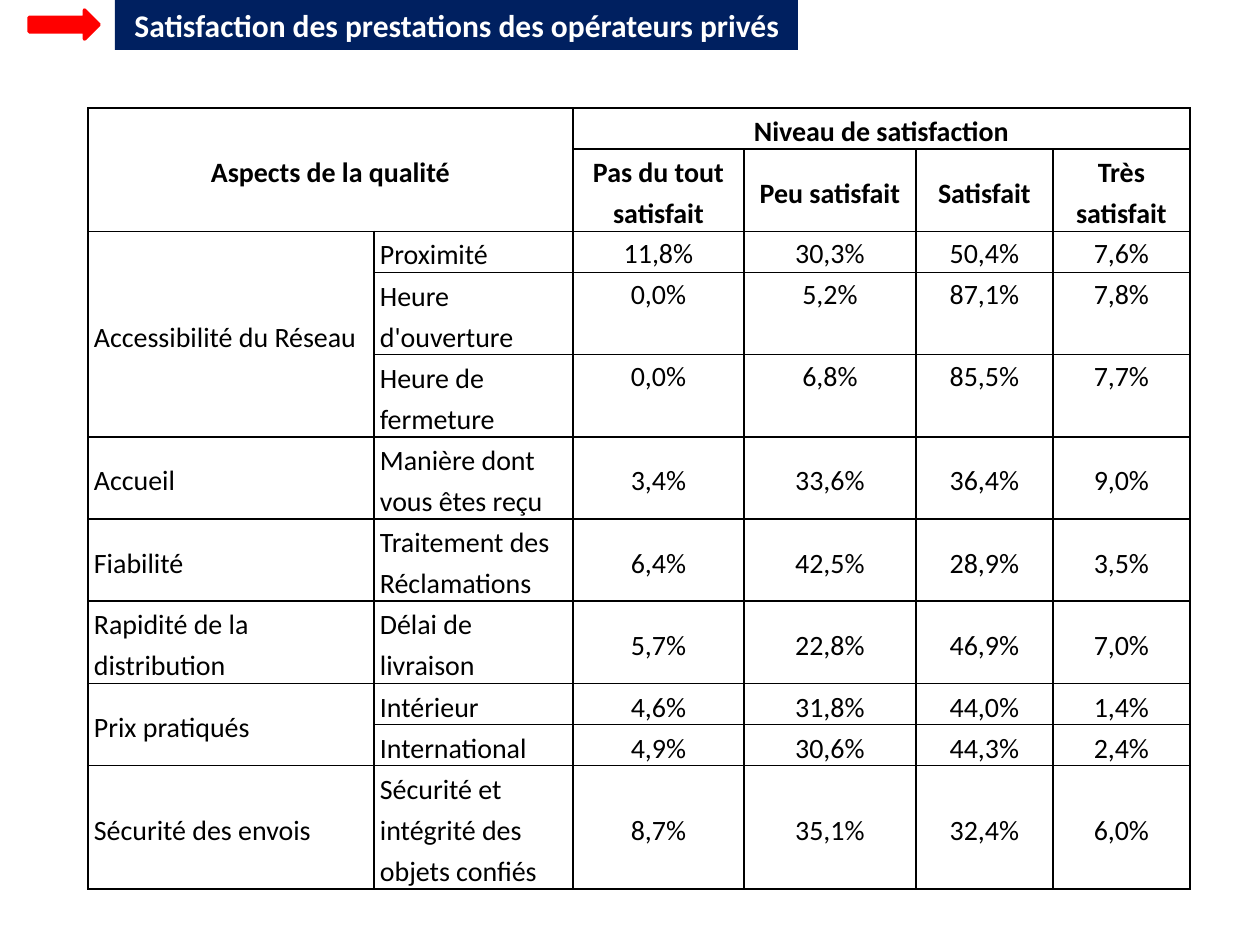
"""Builds the slide on satisfaction with the services of private operators."""
import pptx
import pptx.util
import pptx.dml.color
import pptx.enum.shapes
import pptx.enum.text
import pptx.oxml
import pptx.oxml.ns

TITLE = " Satisfaction des prestations des opérateurs privés"
ASPECTS_HEADING = "Aspects de la qualité"
LEVEL_HEADING = "Niveau de satisfaction"
LEVELS = ["Pas du tout satisfait", "Peu satisfait", "Satisfait", "Très satisfait"]
ASPECTS = [
    ("Accessibilité du Réseau", [
        ("Proximité", 1, ["11,8%", "30,3%", "50,4%", "7,6%"]),
        ("Heure d'ouverture", 2, ["0,0%", "5,2%", "87,1%", "7,8%"]),
        ("Heure de fermeture", 2, ["0,0%", "6,8%", "85,5%", "7,7%"]),
    ]),
    ("Accueil", [("Manière dont vous êtes reçu", 2, ["3,4%", "33,6%", "36,4%", "9,0%"])]),
    ("Fiabilité", [("Traitement des Réclamations", 2, ["6,4%", "42,5%", "28,9%", "3,5%"])]),
    ("Rapidité de la distribution", [("Délai de livraison", 2, ["5,7%", "22,8%", "46,9%", "7,0%"])]),
    ("Prix pratiqués", [
        ("Intérieur", 1, ["4,6%", "31,8%", "44,0%", "1,4%"]),
        ("International", 1, ["4,9%", "30,6%", "44,3%", "2,4%"]),
    ]),
    ("Sécurité des envois", [
        ("Sécurité et intégrité des objets confiés", 3, ["8,7%", "35,1%", "32,4%", "6,0%"]),
    ]),
]
COLUMN_WIDTHS = [286, 199, 171, 172, 137, 137]
LINE_HEIGHT = 40
HEADER_LINES = [1, 2]
THEME = {
    "font": "Calibri", "title_size": 18, "table_size": 16,
    "banner": "002060", "arrow": "FF0000", "ink": "000000", "paper": "FFFFFF",
}
Align = pptx.enum.text.PP_ALIGN
Anchor = pptx.enum.text.MSO_ANCHOR
Preset = pptx.enum.shapes.MSO_SHAPE


def px(length):
    return pptx.util.Emu(round(length * 914400 / 126))


def color(role):
    return pptx.dml.color.RGBColor.from_string(THEME[role])


def style_text(paragraph, size, role, bold):
    for run in paragraph.runs:
        run.font.name = THEME["font"]
        run.font.size = pptx.util.Pt(THEME[size])
        run.font.bold = bold
        run.font.color.rgb = color(role)


def add_block(slide, preset, box, role):
    block = slide.shapes.add_shape(preset, *map(px, box))
    block.shadow.inherit = False
    block.fill.solid()
    block.fill.fore_color.rgb = color(role)
    block.line.fill.background()
    return block


def add_title(slide):
    banner = add_block(slide, Preset.RECTANGLE, (115, 0, 683, 50), "banner")
    frame = banner.text_frame
    frame.text = TITLE
    frame.word_wrap = False
    frame.vertical_anchor = Anchor.MIDDLE
    frame.paragraphs[0].alignment = Align.LEFT
    style_text(frame.paragraphs[0], "title_size", "paper", True)
    arrow = add_block(slide, Preset.RIGHT_ARROW, (29, 10, 70, 29), "arrow")
    arrow.line.color.rgb = color("arrow")
    arrow.line.width = pptx.util.Pt(2)


def draw_borders(cell):
    properties = cell._tc.get_or_add_tcPr()
    for position, side in enumerate(("lnL", "lnR", "lnT", "lnB")):
        properties.insert(position, pptx.oxml.parse_xml(
            f'<a:{side} {pptx.oxml.ns.nsdecls("a")} w="12700"><a:solidFill>'
            f'<a:srgbClr val="{THEME["ink"]}"/></a:solidFill></a:{side}>'))


def write(cell, text, bold=False, align=Align.CENTER, anchor=Anchor.MIDDLE, spacing=1.2, after=None):
    cell.text_frame.text = text
    cell.vertical_anchor = anchor
    paragraph = cell.text_frame.paragraphs[0]
    paragraph.alignment = align
    paragraph.line_spacing = spacing
    if after:
        paragraph.space_after = pptx.util.Pt(after)
    style_text(paragraph, "table_size", "ink", bold)


def add_ratings(slide):
    criteria_lines = [lines for _, criteria in ASPECTS for _, lines, _ in criteria]
    heights = [LINE_HEIGHT * lines for lines in HEADER_LINES + criteria_lines]
    ratings = slide.shapes.add_table(
        len(heights), len(COLUMN_WIDTHS), px(88), px(108), px(sum(COLUMN_WIDTHS)), px(sum(heights))).table
    ratings.first_row = ratings.horz_banding = False
    for column, width in zip(ratings.columns, COLUMN_WIDTHS):
        column.width = px(width)
    for row, height in zip(ratings.rows, heights):
        row.height = px(height)
    for cell in ratings.iter_cells():
        cell.margin_left = cell.margin_right = px(6)
        cell.margin_top = cell.margin_bottom = 0
        cell.fill.background()
        draw_borders(cell)
        write(cell, "")
        cell.text_frame.paragraphs[0].font.size = pptx.util.Pt(THEME["table_size"])

    ratings.cell(0, 0).merge(ratings.cell(1, 1))
    ratings.cell(0, 2).merge(ratings.cell(0, 5))
    write(ratings.cell(0, 0), ASPECTS_HEADING, bold=True)
    write(ratings.cell(0, 2), LEVEL_HEADING, bold=True, anchor=Anchor.BOTTOM)
    for column, level in enumerate(LEVELS, 2):
        write(ratings.cell(1, column), level, bold=True)

    row = len(HEADER_LINES)
    for aspect, criteria in ASPECTS:
        if len(criteria) > 1:
            ratings.cell(row, 0).merge(ratings.cell(row + len(criteria) - 1, 0))
        write(ratings.cell(row, 0), aspect, align=Align.LEFT)
        top_set = aspect == ASPECTS[0][0]
        share_style = {"anchor": Anchor.TOP, "spacing": 1.15, "after": 10} if top_set else {}
        for criterion, _, shares in criteria:
            write(ratings.cell(row, 1), criterion, align=Align.LEFT)
            for column, share in enumerate(shares, 2):
                write(ratings.cell(row, column), share, **share_style)
            row += 1


def main():
    deck = pptx.Presentation()
    deck.slide_width, deck.slide_height = px(1260), px(945)
    slide = deck.slides.add_slide(deck.slide_layouts[6])
    add_title(slide)
    add_ratings(slide)
    deck.save("out.pptx")


if __name__ == "__main__":
    main()
